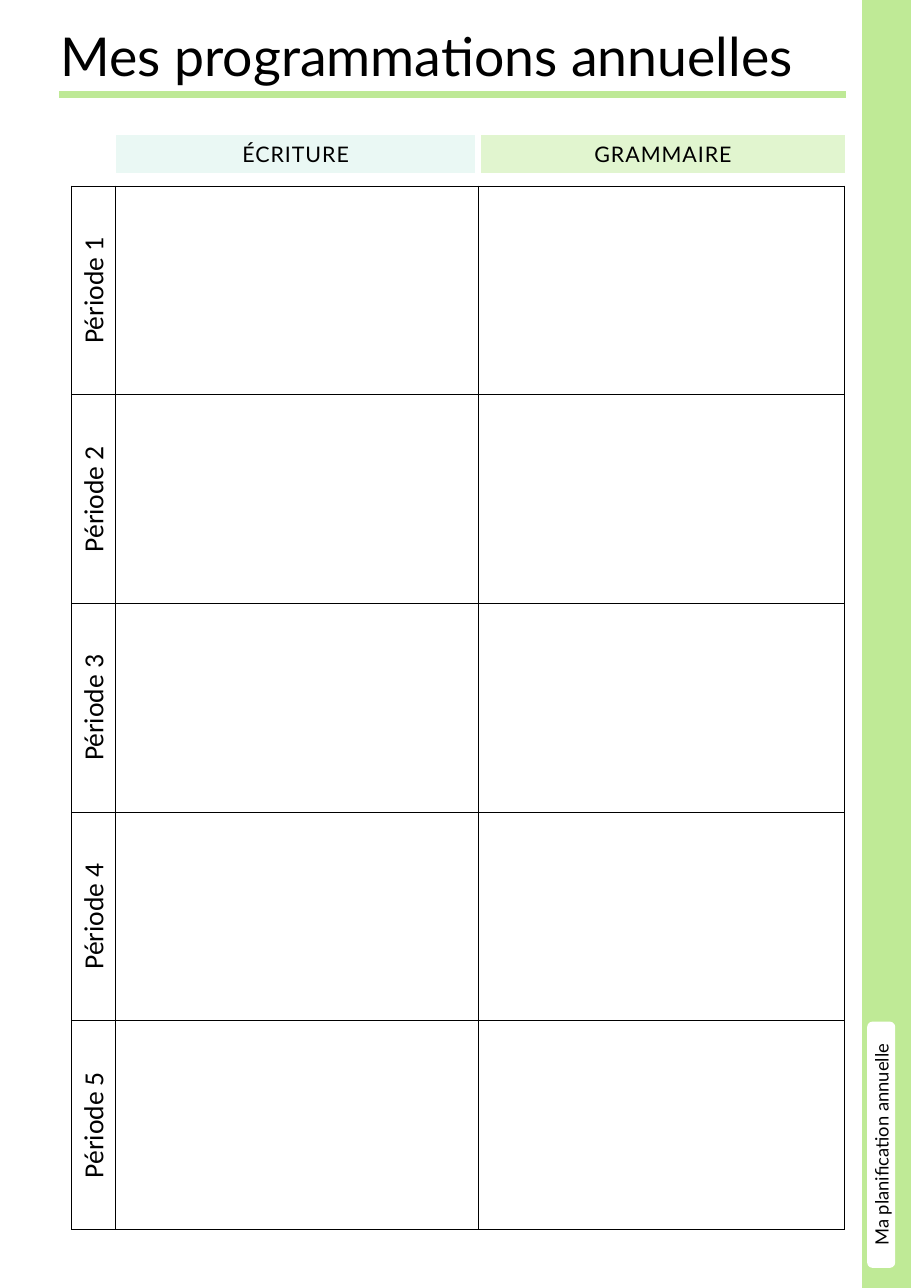
"""Build a yearly planning page with five periods and two subjects."""
import pptx
import pptx.dml.color
import pptx.enum.shapes
import pptx.enum.text
import pptx.oxml
import pptx.oxml.ns
import pptx.util
from pptx.util import Inches

COLORS = {"black": "000000", "white": "FFFFFF", "band": "BFEA96", "rule": "BEE996",
          "writing": "EAF8F4", "grammar": "E1F5CF"}
RGB = {name: pptx.dml.color.RGBColor.from_string(value) for name, value in COLORS.items()}
SHAPES = pptx.enum.shapes.MSO_SHAPE
ANCHORS = pptx.enum.text.MSO_ANCHOR
FIT = pptx.enum.text.MSO_AUTO_SIZE.SHAPE_TO_FIT_TEXT
CENTER = pptx.enum.text.PP_ALIGN.CENTER

presentation = pptx.Presentation()
presentation.slide_width = Inches(8.27)
presentation.slide_height = Inches(11.69)
slide = presentation.slides.add_slide(presentation.slide_layouts[6])


def add_block(kind, left, top, width, height, color, line_width):
    shape = slide.shapes.add_shape(kind, Inches(left), Inches(top), Inches(width), Inches(height))
    shape.shadow.inherit = False
    shape.fill.solid()
    shape.fill.fore_color.rgb = shape.line.color.rgb = RGB[color]
    shape.line.width = pptx.util.Pt(line_width)
    return shape


def write_text(frame, text, size, font="Lato", align=CENTER):
    frame.text = text
    paragraph = frame.paragraphs[0]
    paragraph.alignment = align
    paragraph.font.name = font
    paragraph.font.size = pptx.util.Pt(size)
    paragraph.font.color.rgb = RGB["black"]
    return paragraph


add_block(SHAPES.RECTANGLE, 7.83, 0, 0.43, 11.69, "band", 1)
tab = add_block(SHAPES.ROUNDED_RECTANGLE, 7.88, 9.28, 0.24, 2.22, "white", 1)
write_text(tab.text_frame, "Ma planification annuelle", 12)
tab.text_frame.vertical_anchor = ANCHORS.MIDDLE
tab.text_frame._txBody.bodyPr.set("vert", "vert270")

rule = slide.shapes.add_connector(pptx.enum.shapes.MSO_CONNECTOR.STRAIGHT,
                                  Inches(0.54), Inches(0.86), Inches(7.68), Inches(0.86))
rule.line.color.rgb = RGB["rule"]
rule.line.width = pptx.util.Pt(4.75)
rule._element.spPr.append(pptx.oxml.parse_xml(f'<a:effectLst {pptx.oxml.ns.nsdecls("a")}/>'))

title = slide.shapes.add_textbox(Inches(0.45), Inches(0.16), Inches(7.67), Inches(0.69))
write_text(title.text_frame, "Mes programmations annuelles", 35,
           align=pptx.enum.text.PP_ALIGN.LEFT)
title.text_frame.word_wrap = True
title.text_frame.auto_size = FIT

periods = 5
table_height = 9.47
frame = slide.shapes.add_table(periods, 3, Inches(0.65), Inches(1.69),
                               Inches(7.02), Inches(table_height))
table = frame.table
table.first_row = table.horz_banding = False
for column, width in zip(table.columns, (0.4, 3.29, 3.33)):
    column.width = Inches(width)
for number, row in enumerate(table.rows, 1):
    row.height = Inches(table_height / periods)
    label = row.cells[0]
    write_text(label.text_frame, f"Période {number}", 18, "Calibri")
    label.vertical_anchor = ANCHORS.MIDDLE
    label._tc.get_or_add_tcPr().set("vert", "vert270")
    for cell in row.cells:
        cell.fill.background()
        for position, side in enumerate("LRTB"):
            border = pptx.oxml.parse_xml(
                f'<a:ln{side} {pptx.oxml.ns.nsdecls("a")} w="{pptx.util.Pt(0.75)}"><a:solidFill>'
                f'<a:srgbClr val="{COLORS["black"]}"/></a:solidFill></a:ln{side}>')
            cell._tc.get_or_add_tcPr().insert(position, border)

for subject, left, width, color in (("ÉCRITURE", 1.06, 3.25, "writing"),
                                    ("GRAMMAIRE", 4.37, 3.3, "grammar")):
    header = add_block(SHAPES.RECTANGLE, left, 1.23, width, 0.34, color, 0.75)
    paragraph = write_text(header.text_frame, subject, 14)
    paragraph.runs[0]._r.get_or_add_rPr().set("spc", "60")
    header.text_frame.vertical_anchor = ANCHORS.TOP
    header.text_frame.word_wrap = True
    header.text_frame.auto_size = FIT

presentation.save("out.pptx")
